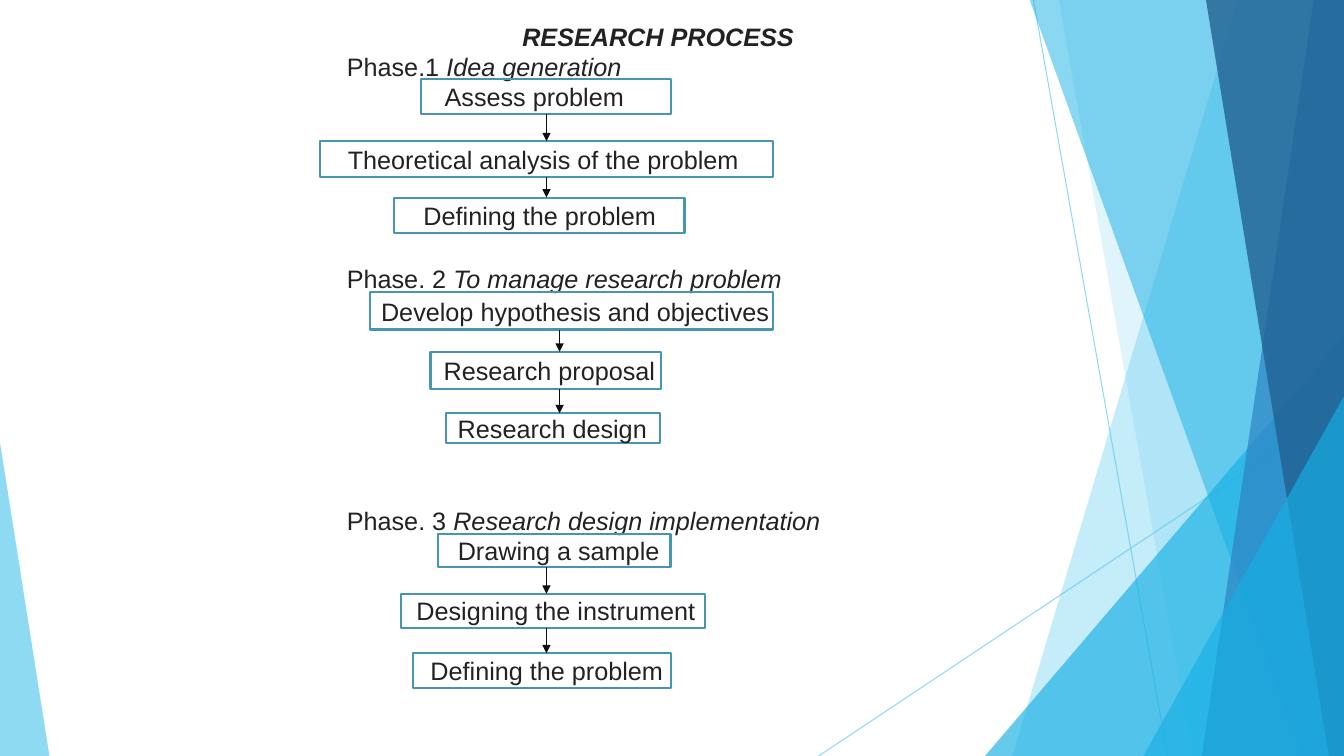
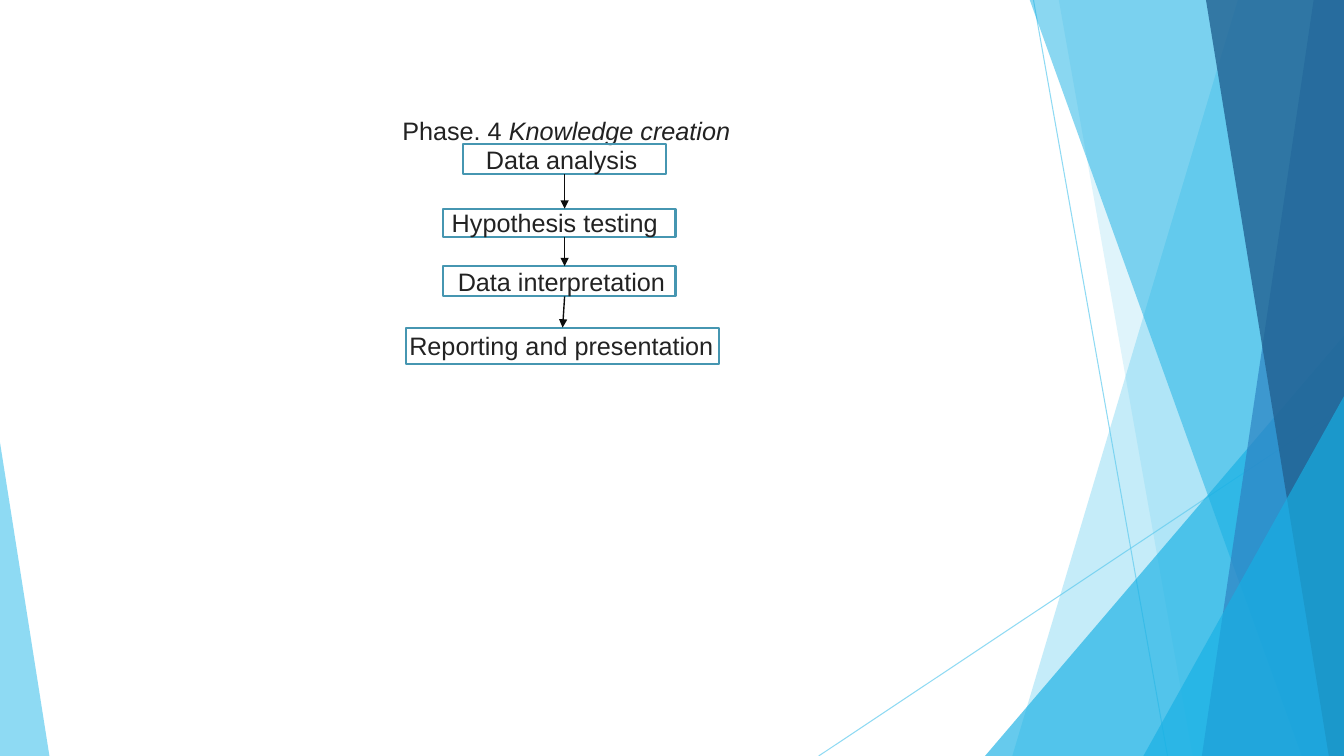
import lxml.etree
import pptx
import pptx.dml.color
import pptx.enum.shapes
import pptx.enum.text
import pptx.oxml.ns
import pptx.util

Inches = pptx.util.Inches
qn = pptx.oxml.ns.qn
SHAPE = pptx.enum.shapes.MSO_SHAPE

COLORS = {
    "sky": "5FCBEF",
    "cyan": "17B0E4",
    "blue": "2E83C3",
    "navy": "226292",
    "frame": "4696B1",
    "arrow": "0D0D0D",
    "text": "222222",
}
FONT = "Arial"
TEXT_SIZE = 18
HEADING_WIDTH = 5.5
HEADING_HEIGHT = 0.32
JOIN_TOLERANCE = 0.02


def write_text(frame, pieces, indent=0):
    frame.word_wrap = True
    frame.auto_size = pptx.enum.text.MSO_AUTO_SIZE.NONE
    frame.vertical_anchor = pptx.enum.text.MSO_ANCHOR.MIDDLE
    frame.margin_left = Inches(indent)
    frame.margin_top = frame.margin_right = frame.margin_bottom = 0
    para = frame.paragraphs[0]
    para.alignment = pptx.enum.text.PP_ALIGN.LEFT
    for text, bold, italic in pieces:
        span = para.add_run()
        span.text = text
        span.font.name = FONT
        span.font.size = pptx.util.Pt(TEXT_SIZE)
        span.font.bold = bold
        span.font.italic = italic
        span.font.color.rgb = pptx.dml.color.RGBColor.from_string(COLORS["text"])


def add_line(slide, start, end, color, width):
    line = slide.shapes.add_connector(
        pptx.enum.shapes.MSO_CONNECTOR.STRAIGHT,
        Inches(start[0]), Inches(start[1]), Inches(end[0]), Inches(end[1]))
    line.line.width = pptx.util.Pt(width)
    line.line.color.rgb = pptx.dml.color.RGBColor.from_string(COLORS[color])
    lxml.etree.SubElement(line.element.spPr, qn("a:effectLst"))
    return line


deck = pptx.Presentation()
deck.slide_width = Inches(13.33)
deck.slide_height = Inches(7.5)
layout = deck.slide_layouts.get_by_name("Title Only")

rays = [
    ((10.25, 0), (11.58, 7.5)),
    ((13.33, 4.03), (8.12, 7.5)),
]
facets = [
    ("band", (12.28, 10.04), "sky", 36),
    ("band", (10.5, 11.83), "sky", 20),
    ("triangle", (9.77, 3.33, 3.56, 1), "cyan", 66),
    ("band", (10.21, 12.91), "cyan", 50),
    ("band", (13.03, 11.92), "blue", 70),
    ("band", (11.96, 13.18), "navy", 80),
    ("triangle", (11.34, 3.93, 1.99, 1), "cyan", 66),
    ("triangle", (0, 4.39, 0.49, 0), "sky", 70),
]

phases = [
    {
        "slide": 0, "heading": ("Phase.1 ", "Idea generation"),
        "heading_at": (3.44, 0.5), "arrow_x": 5.42,
        "steps": [
            ("Assess problem", 4.18, 0.78, 2.48, 0.35, 0.23),
            ("Theoretical analysis of the problem", 3.17, 1.4, 4.5, 0.36, 0.28),
            ("Defining the problem", 3.91, 1.96, 2.88, 0.35, 0.29),
        ],
    },
    {
        "slide": 0, "heading": ("Phase. 2 ", "To manage research problem"),
        "heading_at": (3.44, 2.6), "arrow_x": 5.55,
        "steps": [
            ("Develop hypothesis and objectives", 3.67, 2.9, 4, 0.37, 0.11),
            ("Research proposal", 4.27, 3.49, 2.29, 0.37, 0.13),
            ("Research design", 4.42, 4.1, 2.13, 0.3, 0.12),
        ],
    },
    {
        "slide": 0, "heading": ("Phase. 3 ", "Research design implementation"),
        "heading_at": (3.44, 5), "arrow_x": 5.42,
        "steps": [
            ("Drawing a sample", 4.34, 5.3, 2.31, 0.33, 0.2),
            ("Designing the instrument", 3.98, 5.89, 3.01, 0.34, 0.15),
            ("Defining the problem", 4.1, 6.48, 2.56, 0.35, 0.17),
        ],
    },
    {
        "slide": 1, "heading": ("Phase. 4 ", "Knowledge creation"),
        "heading_at": (3.99, 1.13), "arrow_x": 5.6,
        "steps": [
            ("Data analysis", 4.59, 1.43, 2.02, 0.3, 0.23),
            ("Hypothesis testing", 4.39, 2.07, 2.31, 0.28, 0.09),
            ("Data interpretation", 4.39, 2.64, 2.31, 0.3, 0.15),
            ("Reporting and presentation", 4.03, 3.25, 3.1, 0.36, 0.03),
        ],
    },
]

slides = [deck.slides.add_slide(layout) for _ in range(2)]

decor = [(add_line(slides[0], start, end, "sky", 0.75), 70) for start, end in rays]
for kind, geometry, color, opacity in facets:
    if kind == "band":
        top_x, bottom_x = geometry
        builder = slides[0].shapes.build_freeform(
            Inches(top_x), Inches(-0.01), scale=1.0)
        builder.add_line_segments(
            [(Inches(x), Inches(y))
             for x, y in ((13.33, -0.01), (13.33, 7.5), (bottom_x, 7.5))],
            close=True)
        facet = builder.convert_to_shape()
    else:
        left, top, width, apex = geometry
        facet = slides[0].shapes.add_shape(
            SHAPE.ISOSCELES_TRIANGLE, Inches(left), Inches(top),
            Inches(width), Inches(7.5 - top))
        facet.adjustments[0] = apex
    facet.shadow.inherit = False
    facet.fill.solid()
    facet.fill.fore_color.rgb = pptx.dml.color.RGBColor.from_string(COLORS[color])
    facet.line.fill.background()
    decor.append((facet, opacity))

for order, (shape, opacity) in enumerate(decor):
    tint = next(shape.element.spPr.iter(qn("a:srgbClr")))
    lxml.etree.SubElement(tint, qn("a:alpha"), val=str(opacity * 1000))
    layout.shapes.element.insert(2 + order, shape.element)

title = slides[0].shapes.title
title.left, title.top = Inches(5.18), Inches(0.2)
title.width, title.height = Inches(HEADING_WIDTH), Inches(HEADING_HEIGHT)
write_text(title.text_frame, [("RESEARCH PROCESS", True, True)])

for phase in phases:
    slide = slides[phase["slide"]]
    left, top = (Inches(value) for value in phase["heading_at"])
    width, height = Inches(HEADING_WIDTH), Inches(HEADING_HEIGHT)
    if slide.shapes.title.text_frame.text:
        heading = slide.shapes.add_textbox(left, top, width, height)
    else:
        heading = slide.shapes.title
        heading.left, heading.top = left, top
        heading.width, heading.height = width, height
    label, name = phase["heading"]
    write_text(heading.text_frame, [(label, False, False), (name, False, True)])

    boxes = []
    for text, left, top, width, height, indent in phase["steps"]:
        box = slide.shapes.add_shape(
            SHAPE.RECTANGLE, Inches(left), Inches(top), Inches(width), Inches(height))
        box.shadow.inherit = False
        box.fill.background()
        box.line.color.rgb = pptx.dml.color.RGBColor.from_string(COLORS["frame"])
        box.line.width = pptx.util.Pt(1.5)
        write_text(box.text_frame, [(text, False, False)], indent)
        boxes.append((box, left + width / 2, top, top + height))

    arrow_x = phase["arrow_x"]
    for upper, lower in zip(boxes, boxes[1:]):
        arrow = add_line(slide, (arrow_x, upper[3]), (arrow_x, lower[2]), "arrow", 1)
        if abs(upper[1] - arrow_x) < JOIN_TOLERANCE:
            arrow.begin_connect(upper[0], 2)
        if abs(lower[1] - arrow_x) < JOIN_TOLERANCE:
            arrow.end_connect(lower[0], 0)
        outline = arrow.element.spPr.find(qn("a:ln"))
        lxml.etree.SubElement(outline, qn("a:tailEnd"), type="triangle")

deck.save("out.pptx")
